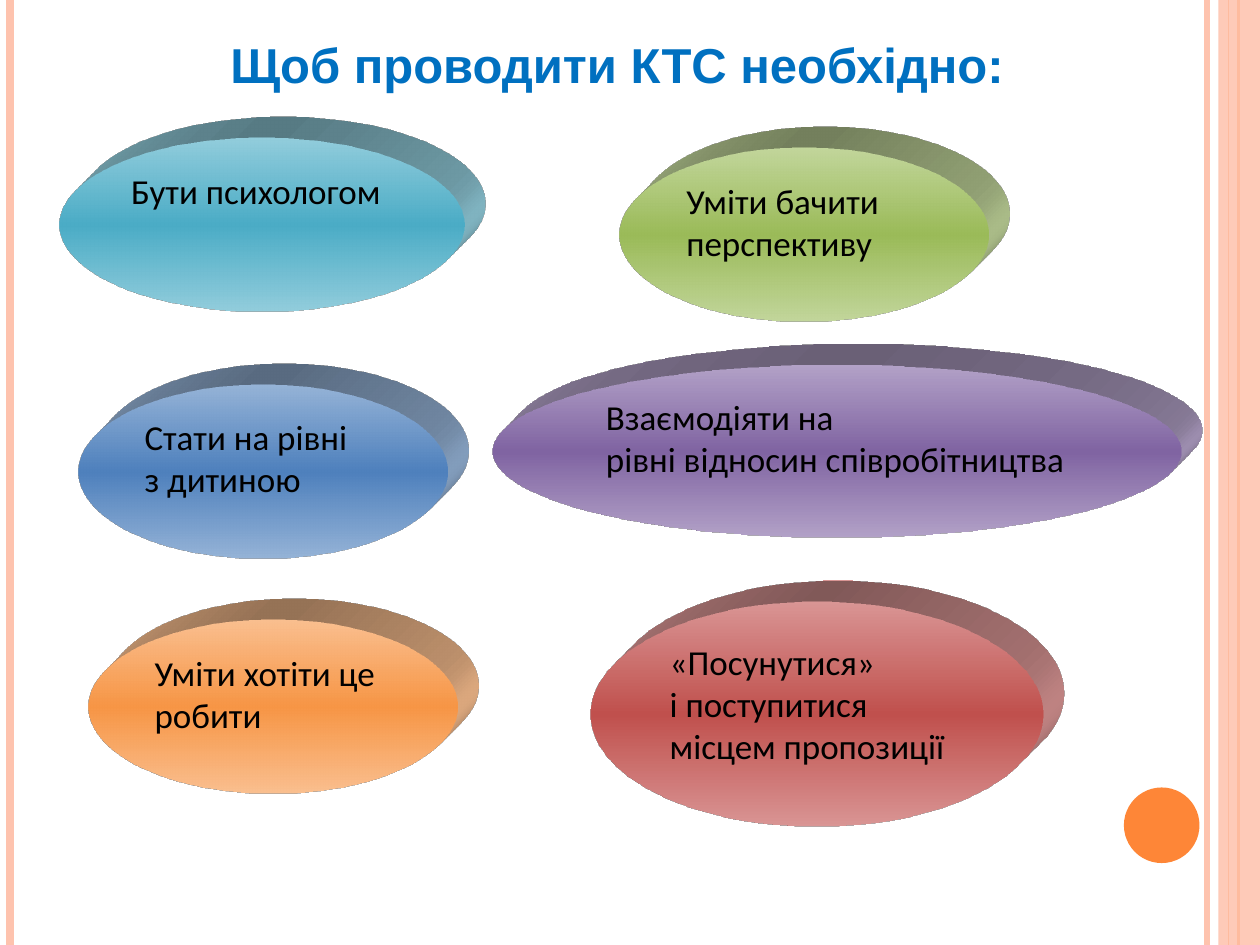
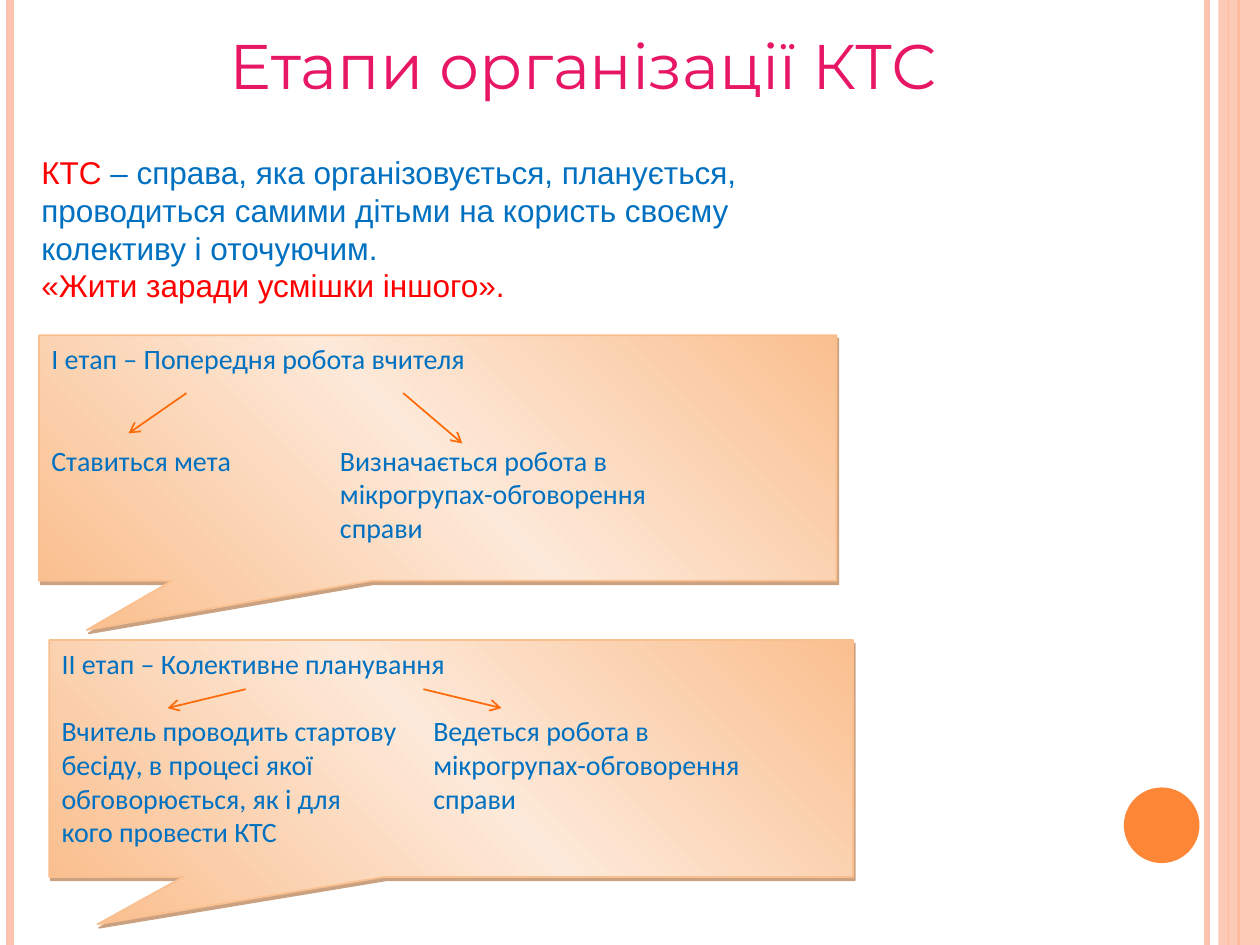
from copy import deepcopy
from lxml import etree
from pptx import Presentation
from pptx.dml.color import RGBColor
from pptx.enum.shapes import MSO_CONNECTOR, MSO_SHAPE
from pptx.enum.text import MSO_ANCHOR, PP_ALIGN
from pptx.oxml import parse_xml
from pptx.oxml.ns import nsdecls, qn
from pptx.util import Inches, Pt

INK = {
    "peach": "FEC3AE", "orange": "FE8637", "arrow": "FF6B0A",
    "blue": "0070C0", "red": "FF0000", "pink": "E81766", "black": "000000",
    "sand": "FABF8F", "cream": "FDE9D9", "shade": "974706",
    "aqua": "92CDDC", "teal": "4BACC6", "lime": "C2D69B", "green": "9BBB59",
    "sky": "95B3D7", "navy": "4F81BD", "lilac": "B2A1C7", "plum": "8064A2",
    "amber": "F79646", "rose": "D99594", "brick": "C0504D",
}
RGB = {name: RGBColor.from_string(code) for name, code in INK.items()}
HEAD = {"name": "Arial", "size": Pt(28), "bold": True}
SHOW = {"name": "Montserrat", "size": Pt(36)}
BODY = {"name": "Arial", "size": Pt(18)}
OVAL = {"name": "Calibri", "size": Pt(20)}
NOTE = {"name": "Calibri", "size": Pt(16)}


def write(frame, lines, form, anchor=MSO_ANCHOR.TOP, align=PP_ALIGN.LEFT):
    frame.word_wrap = True
    frame.vertical_anchor = anchor
    for i, line in enumerate(lines):
        para = frame.paragraphs[0] if i == 0 else frame.add_paragraph()
        para.alignment = align
        for words, ink in line:
            run = para.add_run()
            run.text = words
            run.font.color.rgb = RGB[ink]
            for key, val in form.items():
                setattr(run.font, key, val)


def draw(slide, start, end, ink, width):
    line = slide.shapes.add_connector(
        MSO_CONNECTOR.STRAIGHT, *[Inches(v) for v in (*start, *end)])
    line.line.color.rgb = RGB[ink]
    line.line.width = Pt(width)
    etree.SubElement(line._element.spPr, qn("a:effectLst"))
    return line


prs = Presentation()
prs.slide_width, prs.slide_height = Inches(10), Inches(7.5)
needs, steps = [prs.slides.add_slide(prs.slide_layouts[6]) for _ in range(2)]

for slide in (needs, steps):
    for x, ink, width in [(9.58, "peach", 3), (0.08, "peach", 4.5),
                          (9.83, "orange", 1.5), (9.75, "orange", 0.75)]:
        draw(slide, (x, 0), (x, 7.5), ink, width)
    for kind, area, ink in [
        (MSO_SHAPE.RECTANGLE, (9.67, 0, 0.33, 7.5), "peach"),
        (MSO_SHAPE.OVAL, (8.92, 6.25, 0.6, 0.6), "orange"),
    ]:
        part = slide.shapes.add_shape(kind, *[Inches(v) for v in area])
        part.shadow.inherit = False
        part.fill.solid()
        part.fill.fore_color.rgb = RGB[ink]
        part.line.fill.background()
        if kind == MSO_SHAPE.RECTANGLE:
            tone = part._element.spPr.find(".//" + qn("a:srgbClr"))
            etree.SubElement(tone, qn("a:alpha"), val="87000")

mid, left, mean = MSO_ANCHOR.MIDDLE, PP_ALIGN.LEFT, PP_ALIGN.CENTER
for slide, area, lines, form, anchor, align in [
    (needs, (1.73, 0.23, 6.6, 0.55),
     [[("Щоб проводити КТС необхідно:", "blue")]], HEAD, mid, left),
    (steps, (1.63, 0.16, 6, 1.06),
     [[("Етапи організації КТС", "pink")]], SHOW, MSO_ANCHOR.TOP, mean),
    (steps, (0.23, 1.16, 6, 1.31),
     [[("КТС ", "red"),
       ("– справа, яка організовується, планується,", "blue")],
      [("проводиться самими дітьми на користь своєму", "blue")],
      [("колективу і оточуючим.", "blue")],
      [("«Жити заради усмішки іншого».", "red")]], BODY, mid, left),
]:
    box = slide.shapes.add_textbox(*[Inches(v) for v in area])
    write(box.text_frame, lines, form, anchor, align)

ovals = [
    ((0.47, 1.09, 3.22, 1.38), "aqua", "teal", ["Бути психологом"]),
    ((4.92, 1.17, 2.93, 1.38), "lime", "green",
     ["Уміти бачити", "перспективу"]),
    ((0.62, 3.05, 2.93, 1.38), "sky", "navy",
     ["Стати на рівні", "з дитиною"]),
    ((3.91, 2.89, 5.47, 1.38), "lilac", "plum",
     ["Взаємодіяти на", "рівні відносин співробітництва"]),
    ((0.7, 4.92, 2.93, 1.38), "sand", "amber",
     ["Уміти хотіти це", "робити"]),
    ((4.69, 4.77, 3.59, 1.79), "rose", "brick",
     ["«Посунутися»", "і поступитися", "місцем пропозиції"]),
]
calls = [
    ((0.31, 2.66, 6.33, 1.95), "sand", "cream",
     ["І етап – Попередня робота вчителя",
      "Ставиться мета\tВизначається робота в",
      "\tмікрогрупах-обговорення", "\tсправи"]),
    ((0.39, 5.08, 6.38, 1.88), "sand", "cream",
     ["ІІ етап – Колективне планування",
      "Вчитель проводить стартову\tВедеться робота в",
      "бесіду, в процесі якої\tмікрогрупах-обговорення",
      "обговорюється, як і для\tсправи", "кого провести КТС"]),
]
forms = []
for slide, kind, group, angle, form, ink in [
    (needs, MSO_SHAPE.OVAL, ovals, 90, OVAL, "black"),
    (steps, MSO_SHAPE.RECTANGULAR_CALLOUT, calls, 45, NOTE, "blue"),
]:
    for area, rim, core, lines in group:
        item = slide.shapes.add_shape(kind, *[Inches(v) for v in area])
        item.shadow.inherit = False
        item.fill.gradient()
        item.fill.gradient_angle = angle
        stops = item._element.spPr.find(".//" + qn("a:gsLst"))
        stops.insert(1, deepcopy(stops[0]))
        for stop, tone, spot in zip(item.fill.gradient_stops,
                                    (rim, core, rim), (0, 0.5, 1)):
            stop.color.rgb = RGB[tone]
            stop.position = spot
        item.line.fill.background()
        write(item.text_frame, [[(words, ink)] for words in lines], form)
        forms.append((item, rim))

for item, rim in forms[:len(ovals)]:
    props = item._element.spPr
    props.append(parse_xml(
        f'<a:scene3d {nsdecls("a")}><a:camera prst="legacyObliqueTopRight"/>'
        '<a:lightRig rig="legacyFlat3" dir="b"/></a:scene3d>'))
    props.append(parse_xml(
        f'<a:sp3d {nsdecls("a")} extrusionH="430200" prstMaterial="legacyMatte">'
        '<a:bevelT w="13500" h="13500" prst="angle"/>'
        '<a:bevelB w="13500" h="13500" prst="angle"/>'
        f'<a:extrusionClr><a:srgbClr val="{INK[rim]}"/></a:extrusionClr></a:sp3d>'))

for (item, rim), gap, stop in zip(forms[len(ovals):], (39, 19.5), (2.29, 2.95)):
    item.adjustments[0], item.adjustments[1] = -0.44, 0.7
    item.line.color.rgb = RGB[rim]
    item.line.width = Pt(1)
    item._element.spPr.find(qn("a:effectLst")).append(parse_xml(
        f'<a:outerShdw {nsdecls("a")} dist="28000" dir="3780000" algn="ctr" '
        f'rotWithShape="0"><a:srgbClr val="{INK["shade"]}">'
        '<a:alpha val="50000"/></a:srgbClr></a:outerShdw>'))
    paras = item.text_frame.paragraphs
    paras[1].space_before = Pt(gap)
    for para in paras[1:]:
        tabs = etree.SubElement(para._p.get_or_add_pPr(), qn("a:tabLst"))
        etree.SubElement(tabs, qn("a:tab"), pos=str(Inches(stop)), algn="l")

for start, end in [((1.48, 3.12), (1.02, 3.44)), ((3.2, 3.12), (3.67, 3.52)),
                   ((1.95, 5.47), (1.33, 5.62)), ((3.36, 5.47), (3.98, 5.62))]:
    arrow = draw(steps, start, end, "arrow", 1)
    etree.SubElement(arrow.line._get_or_add_ln(), qn("a:tailEnd"), type="arrow")

prs.save("out.pptx")
